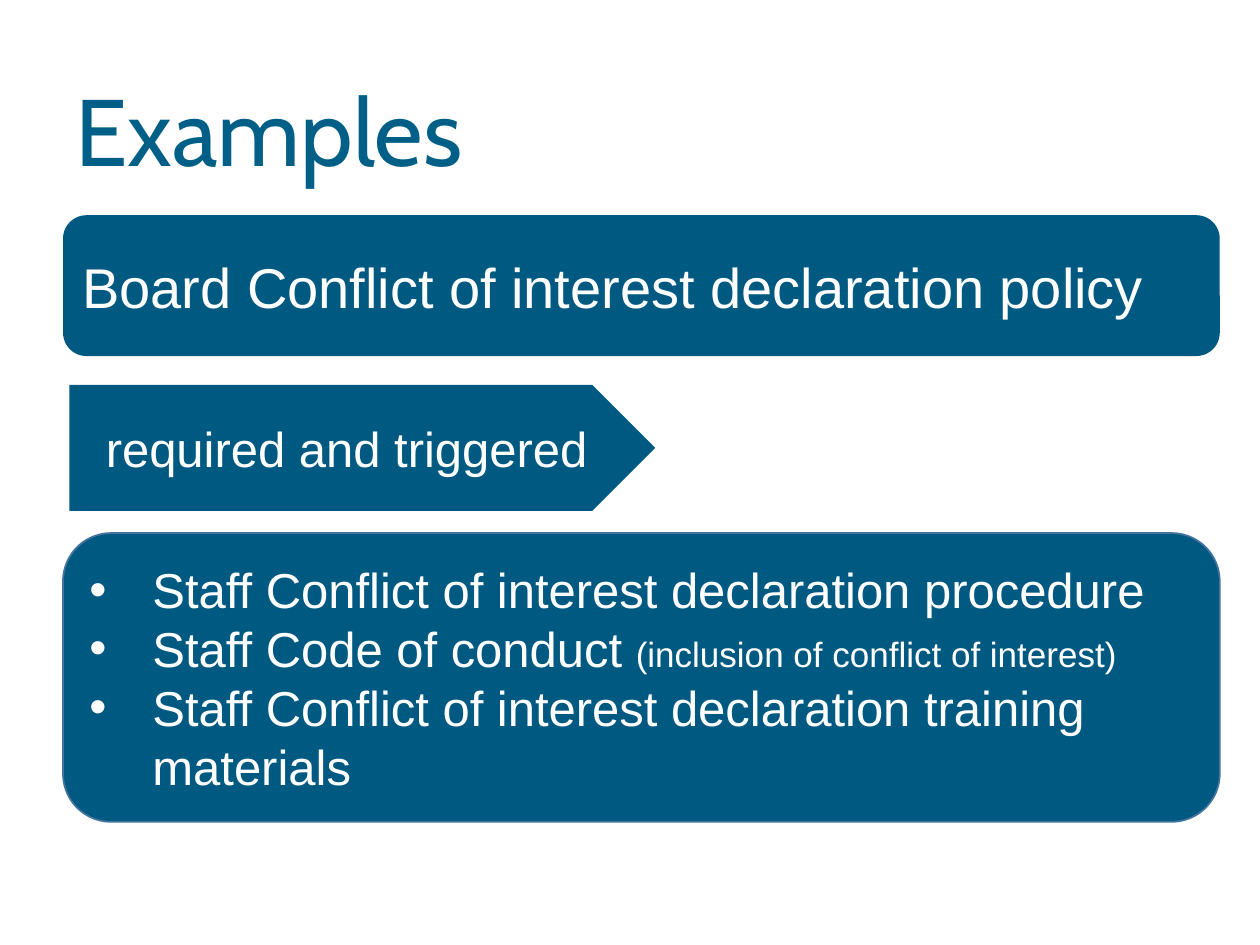
"""Build the slide of conflict of interest policy examples."""
from lxml.etree import SubElement
from pptx import Presentation
from pptx.dml.color import RGBColor
from pptx.enum.shapes import MSO_SHAPE
from pptx.enum.text import MSO_ANCHOR, PP_ALIGN
from pptx.oxml.ns import qn
from pptx.util import Pt

COLORS = {"title": "005F86", "panel": "005981", "edge": "43739E", "text": "FFFFFF"}

TITLE = [[("Examples", 54)]]
POLICY = [[("Board Conflict of interest declaration policy", 32)]]
TRIGGER = [[("required and triggered", 28)]]
DOCUMENTS = [
    [("Staff Conflict of interest declaration procedure", 28)],
    [("Staff Code of conduct ", 28), ("(inclusion of conflict of interest)", 20)],
    [("Staff Conflict of interest declaration training materials", 28)],
]

LEFT, WIDTH = 36, 661


def write(frame, paragraphs, color="text", font="Arial", anchor=MSO_ANCHOR.MIDDLE,
          align=PP_ALIGN.LEFT, spacing=None, bullet=None, indent=36):
    frame.word_wrap = True
    frame.vertical_anchor = anchor
    for index, runs in enumerate(paragraphs):
        paragraph = frame.add_paragraph() if index else frame.paragraphs[0]
        paragraph.alignment = align
        if spacing:
            paragraph.line_spacing = spacing
        if bullet:
            properties = paragraph._p.get_or_add_pPr()
            properties.set("marL", str(Pt(indent)))
            properties.set("indent", str(-Pt(indent)))
            SubElement(properties, qn("a:buFont")).set("typeface", font)
            SubElement(properties, qn("a:buChar")).set("char", bullet)
        for text, size in runs:
            run = paragraph.add_run()
            run.text = text
            run.font.name = font
            run.font.size = Pt(size)
            run.font.color.rgb = RGBColor.from_string(COLORS[color])


def add_panel(slide, kind, left, top, width, height, edge=None):
    panel = slide.shapes.add_shape(kind, Pt(left), Pt(top), Pt(width), Pt(height))
    panel.shadow.inherit = False
    panel.fill.solid()
    panel.fill.fore_color.rgb = RGBColor.from_string(COLORS["panel"])
    if edge:
        panel.line.color.rgb = RGBColor.from_string(COLORS[edge])
        panel.line.width = Pt(1)
    else:
        panel.line.fill.background()
    return panel.text_frame


def main():
    deck = Presentation()
    deck.slide_width, deck.slide_height = Pt(720), Pt(540)
    slide = deck.slides.add_slide(deck.slide_layouts[6])

    title = slide.shapes.add_textbox(Pt(LEFT), Pt(49.7), Pt(620.6), Pt(60.5))
    write(title.text_frame, TITLE, color="title", font="Cabin",
          anchor=MSO_ANCHOR.BOTTOM, spacing=0.9)

    policy = add_panel(slide, MSO_SHAPE.ROUNDED_RECTANGLE, LEFT, 123, WIDTH, 80.5)
    write(policy, POLICY)

    trigger = add_panel(slide, MSO_SHAPE.PENTAGON, 39.6, 220, 334.8, 72)
    write(trigger, TRIGGER, align=PP_ALIGN.CENTER)

    documents = add_panel(slide, MSO_SHAPE.ROUNDED_RECTANGLE, LEFT, 304.6, WIDTH, 165,
                          edge="edge")
    write(documents, DOCUMENTS, bullet="•")

    deck.save("out.pptx")


if __name__ == "__main__":
    main()
